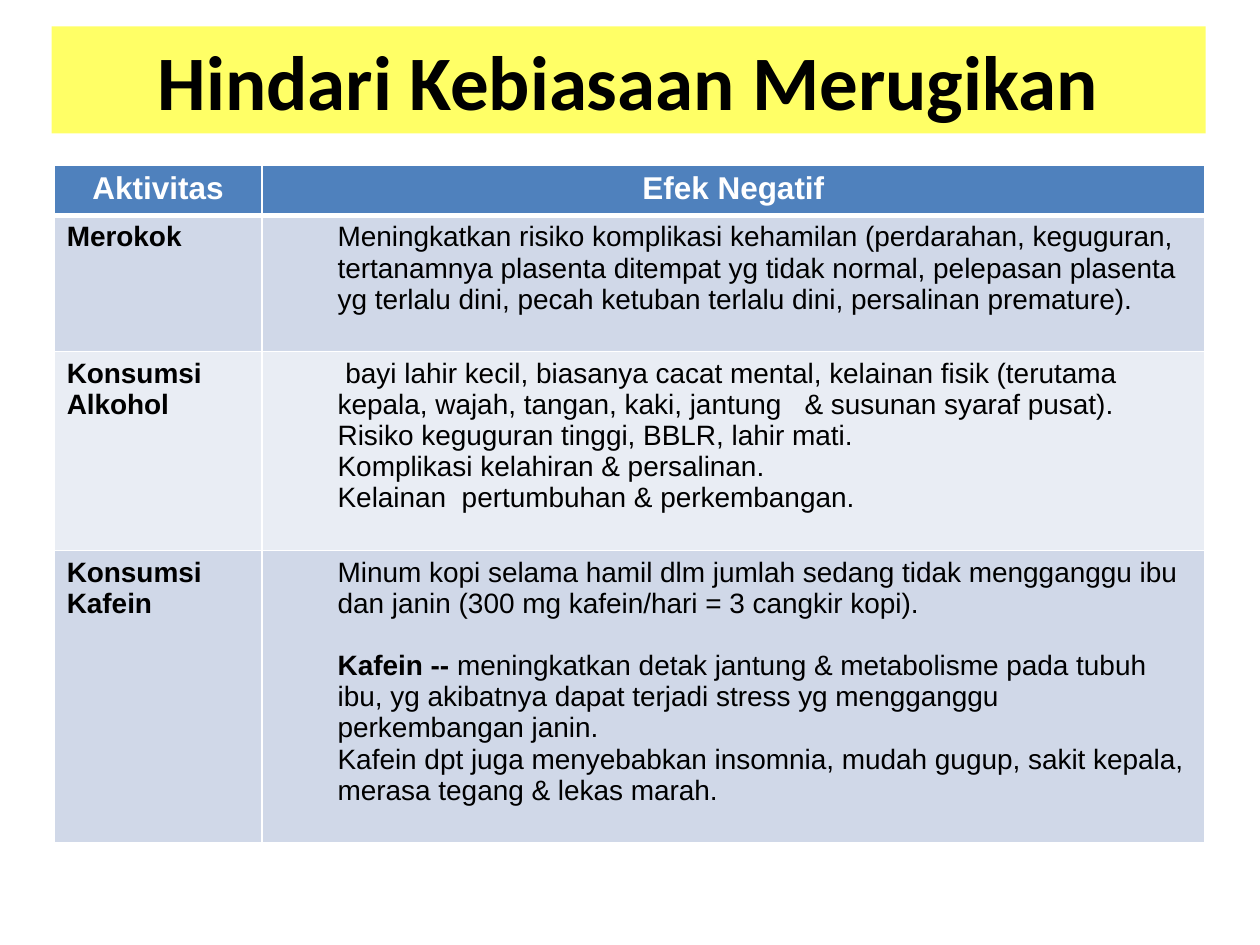
from lxml.etree import SubElement
from pptx import Presentation
from pptx.dml.color import RGBColor
from pptx.enum.shapes import MSO_SHAPE
from pptx.enum.text import MSO_ANCHOR, PP_ALIGN
from pptx.oxml.ns import qn
from pptx.util import Inches, Pt

YELLOW = RGBColor(0xFF, 0xFF, 0x66)
BLUE = RGBColor(0x4F, 0x81, 0xBD)
BAND_DARK = RGBColor(0xD0, 0xD8, 0xE8)
BAND_LIGHT = RGBColor(0xE9, 0xED, 0xF4)
WHITE = RGBColor(0xFF, 0xFF, 0xFF)
BLACK = RGBColor(0, 0, 0)

TITLE = "Hindari Kebiasaan Merugikan"
HEADINGS = ["Aktivitas", "Efek Negatif"]
COLUMN_WIDTHS = [1.65, 7.48]
ROW_HEIGHTS = [0.4, 1.08, 1.58, 2.32]
HABITS = [
    ("Merokok", [
        {"text": "Meningkatkan risiko komplikasi kehamilan (perdarahan, keguguran, "
                 "tertanamnya plasenta ditempat yg tidak normal, pelepasan plasenta "
                 "yg terlalu dini, pecah ketuban terlalu dini, persalinan premature)."},
    ]),
    ("Konsumsi Alkohol", [
        {"text": " bayi lahir kecil, biasanya cacat mental, kelainan fisik (terutama "
                 "kepala, wajah, tangan, kaki, jantung   & susunan syaraf pusat)."},
        {"text": "Risiko keguguran tinggi, BBLR, lahir mati."},
        {"text": "Komplikasi kelahiran & persalinan."},
        {"text": "Kelainan  pertumbuhan & perkembangan."},
    ]),
    ("Konsumsi Kafein", [
        {"text": "Minum kopi selama hamil dlm jumlah sedang tidak mengganggu ibu "
                 "dan janin (300 mg kafein/hari = 3 cangkir kopi)."},
        {"lead": "Kafein -- ", "before": 18,
         "text": "meningkatkan detak jantung & metabolisme pada tubuh ibu, yg akibatnya "
                 "dapat terjadi stress yg mengganggu perkembangan janin."},
        {"text": "Kafein dpt juga menyebabkan insomnia, mudah gugup, sakit kepala, "
                 "merasa tegang & lekas marah."},
    ]),
]


def write(para, text, font="Arial", size=16, color=BLACK, bold=False,
          align=PP_ALIGN.LEFT, lead="", before=0, indent=0):
    para.alignment = align
    para.space_before = Pt(before)
    if indent:
        para.level = 1
        properties = para._p.get_or_add_pPr()
        properties.set("marL", str(Inches(indent)))
        properties.set("indent", "0")
    for words, heavy in ((lead, True), (text, bold)):
        if words:
            span = para.add_run()
            span.text = words
            span.font.name = font
            span.font.size = Pt(size)
            span.font.color.rgb = color
            span.font.bold = heavy


class SlideBuilder:
    """Holds the current slide and draws its elements in one style."""

    def __init__(self, page, border=WHITE):
        self.page = page
        self.border = border

    def banner(self, text, left, top, width, height):
        box = self.page.shapes.add_shape(
            MSO_SHAPE.RECTANGLE, Inches(left), Inches(top), Inches(width), Inches(height))
        box.shadow.inherit = False
        box.fill.solid()
        box.fill.fore_color.rgb = YELLOW
        box.line.fill.background()
        box.text_frame.vertical_anchor = MSO_ANCHOR.MIDDLE
        write(box.text_frame.paragraphs[0], text, font="Calibri", size=44,
              bold=True, align=PP_ALIGN.CENTER)

    def style_cell(self, cell, fill, top=1, bottom=1):
        properties = cell._tc.get_or_add_tcPr()
        for side, points in (("L", 1), ("R", 1), ("T", top), ("B", bottom)):
            line = SubElement(properties, qn(f"a:ln{side}"), w=str(Pt(points)))
            paint = SubElement(line, qn("a:solidFill"))
            SubElement(paint, qn("a:srgbClr"), val=str(self.border))
        cell.fill.solid()
        cell.fill.fore_color.rgb = fill

    def habit_table(self, left, top):
        table = self.page.shapes.add_table(
            len(ROW_HEIGHTS), len(COLUMN_WIDTHS), Inches(left), Inches(top),
            Inches(sum(COLUMN_WIDTHS)), Inches(sum(ROW_HEIGHTS))).table
        table.horz_banding = False
        for column, width in zip(table.columns, COLUMN_WIDTHS):
            column.width = Inches(width)
        for row, height in zip(table.rows, ROW_HEIGHTS):
            row.height = Inches(height)
        for index, heading in enumerate(HEADINGS):
            cell = table.cell(0, index)
            self.style_cell(cell, BLUE, bottom=3)
            write(cell.text_frame.paragraphs[0], heading, size=18, color=WHITE,
                  bold=True, align=PP_ALIGN.CENTER)
        for index, (habit, effects) in enumerate(HABITS, start=1):
            name_cell, effect_cell = table.cell(index, 0), table.cell(index, 1)
            for cell in (name_cell, effect_cell):
                self.style_cell(cell, BAND_DARK if index % 2 else BAND_LIGHT,
                                top=3 if index == 1 else 1)
            write(name_cell.text_frame.paragraphs[0], habit, bold=True)
            frame = effect_cell.text_frame
            for number, effect in enumerate(effects):
                para = frame.add_paragraph() if number else frame.paragraphs[0]
                write(para, indent=0.5, **effect)


def main():
    deck = Presentation()
    deck.slide_width = Inches(10)
    deck.slide_height = Inches(7.5)
    builder = SlideBuilder(deck.slides.add_slide(deck.slide_layouts[6]))
    builder.banner(TITLE, 0.41, 0.21, 9.16, 0.85)
    builder.habit_table(0.43, 1.31)
    deck.save("out.pptx")


if __name__ == "__main__":
    main()
